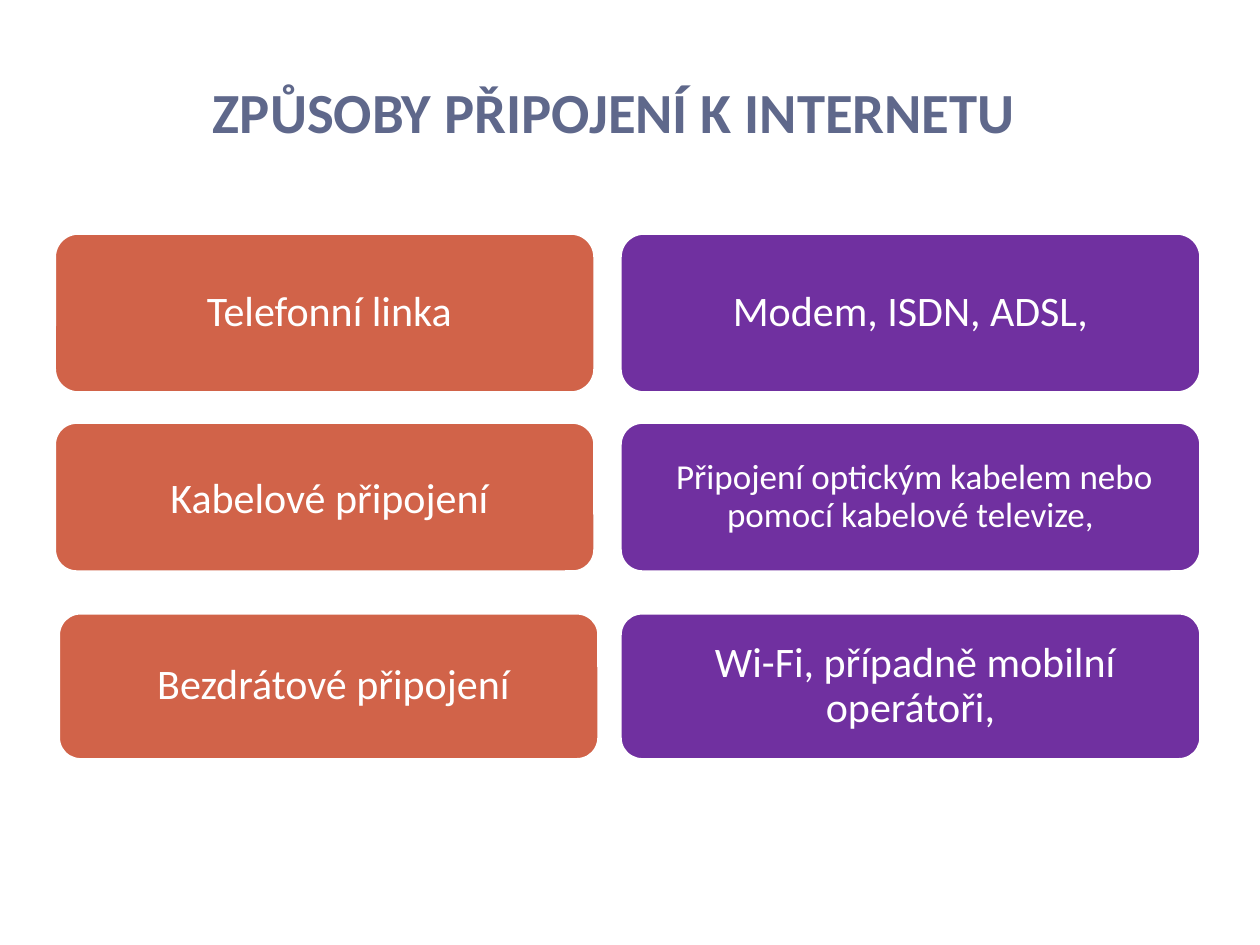
"""Build a slide pairing the ways of connecting to the internet with their technologies."""
import pptx
import pptx.dml.color
import pptx.enum.shapes
import pptx.enum.text
import pptx.util

Pt = pptx.util.Pt
RGBColor = pptx.dml.color.RGBColor
ANCHOR = pptx.enum.text.MSO_ANCHOR
CENTER = pptx.enum.text.PP_ALIGN.CENTER

ORANGE = RGBColor(0xD1, 0x63, 0x49)
PURPLE = RGBColor(0x70, 0x30, 0xA0)
SLATE = RGBColor(0x5F, 0x68, 0x8B)
WHITE = RGBColor(0xFF, 0xFF, 0xFF)


def set_text(s, text, size, color, anchor, bold=False):
    tf = s.text_frame
    tf.word_wrap = True
    tf.vertical_anchor = anchor
    tf.text = text
    p = tf.paragraphs[0]
    p.alignment = CENTER
    r = p.runs[0]
    r.font.name = "Calibri"
    r.font.size = Pt(size)
    r.font.bold = bold
    r.font.color.rgb = color
    return tf


prs = pptx.Presentation()
prs.slide_width, prs.slide_height = Pt(720), Pt(540)
slide = prs.slides.add_slide(prs.slide_layouts[6])

title = slide.shapes.add_textbox(Pt(17.3), Pt(37.4), Pt(674.6), Pt(49))
set_text(title, "ZPŮSOBY PŘIPOJENÍ K INTERNETU ", 32.4, SLATE, ANCHOR.BOTTOM, True)

METHOD_WIDTH, DETAIL_LEFT, DETAIL_WIDTH = 309, 354.3, 332
rows = [
    (133.2, 91.4, 31, " Telefonní linka", " Modem, ISDN, ADSL, ", 24, 0.9),
    (241.2, 85.7, 31, " Kabelové připojení",
     " Připojení optickým kabelem nebo pomocí kabelové televize,", 20, 1),
    (350.2, 84, 33.3, " Bezdrátové připojení",
     " Wi-Fi, případně mobilní operátoři,", 24, 0.9),
]
for top, height, method_left, method, detail, detail_size, method_spacing in rows:
    for left, width, fill, text, size, spacing in (
        (method_left, METHOD_WIDTH, ORANGE, method, 24, method_spacing),
        (DETAIL_LEFT, DETAIL_WIDTH, PURPLE, detail, detail_size, 0.9),
    ):
        s = slide.shapes.add_shape(
            pptx.enum.shapes.MSO_SHAPE.ROUNDED_RECTANGLE,
            Pt(left), Pt(top), Pt(width), Pt(height))
        s.adjustments[0] = 0.15
        s.shadow.inherit = False
        s.fill.solid()
        s.fill.fore_color.rgb = fill
        s.line.color.rgb = WHITE
        s.line.width = Pt(2)
        tf = set_text(s, text, size, WHITE, ANCHOR.MIDDLE)
        tf.margin_left = tf.margin_right = Pt(7)
        tf.margin_top = tf.margin_bottom = Pt(4)
        tf.paragraphs[0].line_spacing = spacing

prs.save("out.pptx")
